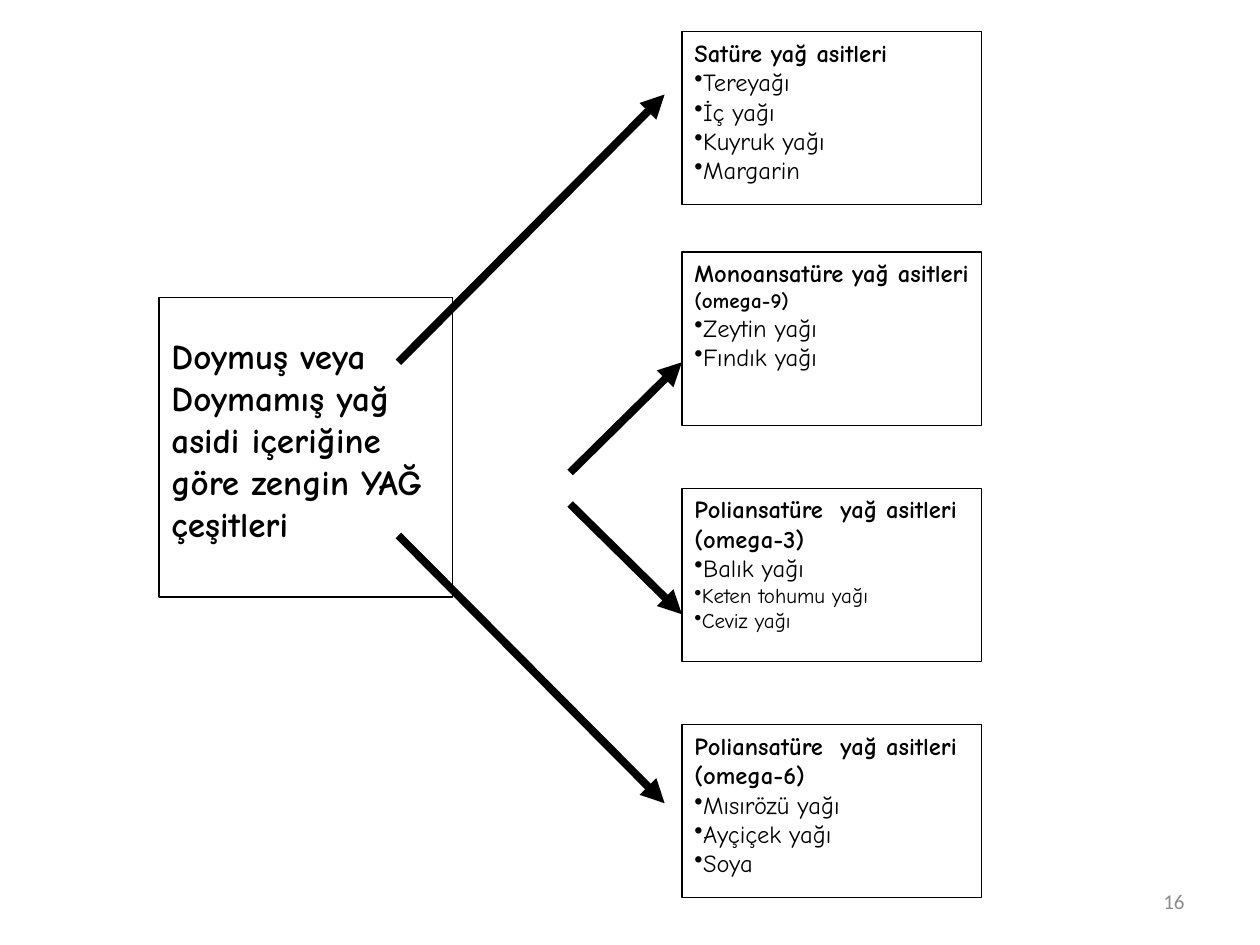
from lxml.etree import SubElement
from pptx import Presentation
from pptx.dml.color import RGBColor
from pptx.enum.shapes import MSO_CONNECTOR as Connector, MSO_SHAPE as Shape
from pptx.enum.text import MSO_ANCHOR as Anchor, PP_ALIGN as Align
from pptx.oxml.ns import qn
from pptx.util import Inches, Pt

COLORS = {"ink": "000000", "paper": "FFFFFF", "number": "8C8C8C"}
FONT = "Comic Neue"
CELL = 0.125  # the page is a grid of 80 columns and 60 rows

GROUP_LEFT, GROUP_WIDTH, GROUP_HEIGHT = 43.3, 19, 11
# Top row, heading spans and bulleted oils, each text with its size
GROUPS = [
    (2, [("Satüre yağ asitleri", 14)],
     [("Tereyağı", 14), ("İç yağı", 14), ("Kuyruk yağı", 14), ("Margarin", 14)]),
    (16, [("Monoansatüre yağ asitleri ", 14), ("(omega-9)", 12)],
     [("Zeytin yağı", 14), ("Fındık yağı", 14)]),
    (31, [("Poliansatüre  yağ asitleri (omega-3)", 14)],
     [("Balık yağı", 14), ("Keten tohumu yağı", 12), ("Ceviz yağı", 12)]),
    (46, [("Poliansatüre  yağ asitleri (omega-6)", 14)],
     [("Mısırözü yağı", 14), ("Ayçiçek yağı", 14), ("Soya", 14)]),
]
TOPIC = "Doymuş veya Doymamış yağ asidi içeriğine göre zengin YAĞ çeşitleri"
OUTER, INNER = (25.3, 42.2), (36.2, GROUP_LEFT)
ARROWS = [(OUTER, (23, 6)), (INNER, (30, 23)), (INNER, (32, 39)), (OUTER, (34, 51))]


def grid(*cells):
    return [Inches(cell * CELL) for cell in cells]


def color(name):
    return RGBColor.from_string(COLORS[name])


def add_span(para, text, size, bold=False, font=FONT, ink="ink"):
    span = para.add_run()
    span.text = text
    span.font.size, span.font.bold, span.font.name = Pt(size), bold, font
    span.font.color.rgb = color(ink)


def add_bullet(para):
    SubElement(para._p.get_or_add_pPr(), qn("a:buChar"), char="•")


def add_frame(page, box):
    """Add an outlined rectangle and return its text frame."""
    shape = page.shapes.add_shape(Shape.RECTANGLE, *grid(*box))
    shape.shadow.inherit = False
    shape.fill.solid()
    shape.fill.fore_color.rgb = color("paper")
    shape.line.color.rgb = color("ink")
    shape.line.width = Pt(0.75)
    frame = shape.text_frame
    frame.word_wrap = True
    frame.vertical_anchor = Anchor.TOP
    frame.paragraphs[0].alignment = Align.LEFT
    return frame


def add_group(page, box, heading, oils):
    frame = add_frame(page, box)
    for text, size in heading:
        add_span(frame.paragraphs[0], text, size, bold=True)
    for text, size in oils:
        para = frame.add_paragraph()
        para.alignment = Align.LEFT
        add_bullet(para)
        add_span(para, text, size)


def add_topic(page, box):
    frame = add_frame(page, box)
    frame.margin_top = Inches(0.29)
    add_span(frame.paragraphs[0], TOPIC, 20, bold=True)


def add_arrow(page, columns, rows):
    start, end = zip(columns, rows)
    arrow = page.shapes.add_connector(Connector.STRAIGHT, *grid(*start, *end))
    arrow.line.color.rgb = color("ink")
    arrow.line.width = Pt(4.5)
    SubElement(arrow.line._get_or_add_ln(), qn("a:tailEnd"), type="triangle")
    SubElement(arrow._element.spPr, qn("a:effectLst"))


def add_page_number(page, box, number):
    frame = page.shapes.add_textbox(*grid(*box)).text_frame
    frame.word_wrap = True
    frame.vertical_anchor = Anchor.MIDDLE
    para = frame.paragraphs[0]
    para.alignment = Align.RIGHT
    add_span(para, number, 12, font="Calibri", ink="number")


def main():
    deck = Presentation()
    deck.slide_width, deck.slide_height = grid(80, 60)
    page = deck.slides.add_slide(deck.slide_layouts[6])
    add_page_number(page, (57.33, 55.6, 18.67, 3.2), "16")
    for top, heading, oils in GROUPS:
        add_group(page, (GROUP_LEFT, top, GROUP_WIDTH, GROUP_HEIGHT), heading, oils)
    add_topic(page, (10.1, 18.9, 18.65, 19))
    for columns, rows in ARROWS:
        add_arrow(page, columns, rows)
    deck.save("out.pptx")


if __name__ == "__main__":
    main()
